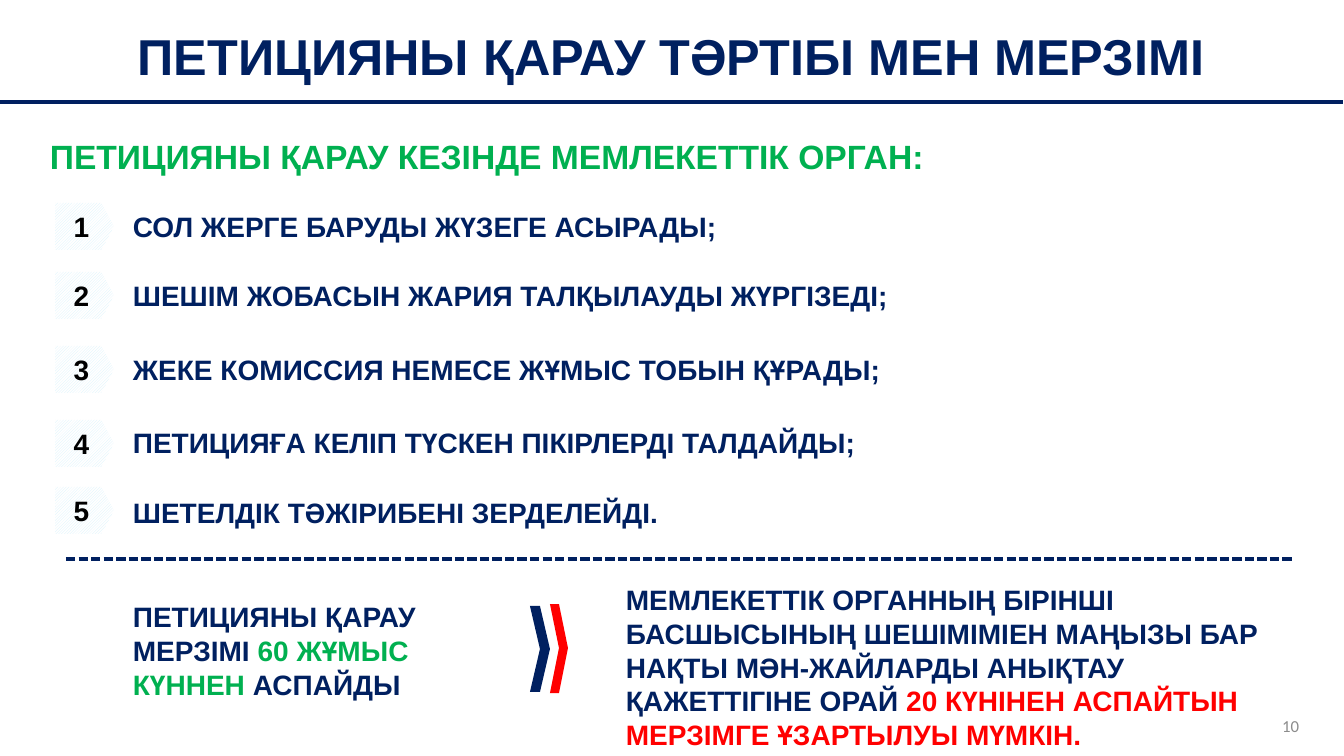
from pptx import Presentation, util as u
from pptx.dml.color import RGBColor
from pptx.enum import dml, shapes, text
from pptx.oxml.ns import qn
from lxml import etree

NAVY = RGBColor(0x00, 0x20, 0x60)
GREEN = RGBColor(0x00, 0xB0, 0x50)
RED = RGBColor(0xFF, 0x00, 0x00)
BLACK = RGBColor(0x00, 0x00, 0x00)
GRAY = RGBColor(0x8C, 0x8C, 0x8C)
ICE = RGBColor(0xD5, 0xF2, 0xFC)
WHITE = RGBColor(0xFF, 0xFF, 0xFF)

SCALE = 914400 / 100.8  # EMU per px
LEFT, CENTER, RIGHT = text.PP_ALIGN.LEFT, text.PP_ALIGN.CENTER, text.PP_ALIGN.RIGHT
TOP, MIDDLE = text.MSO_ANCHOR.TOP, text.MSO_ANCHOR.MIDDLE


def px(*values):
    return [u.Emu(round(v * SCALE)) for v in values]


class Deck:
    font = "Arial"

    def __init__(self, width, height):
        self.prs = Presentation()
        self.prs.slide_width, self.prs.slide_height = px(width, height)
        self.s = self.prs.slides.add_slide(self.prs.slide_layouts[6])

    def add_runs(self, tf, runs, size, align, bold=True, font=None):
        p = tf.paragraphs[0]
        p.alignment = align
        for words, color in runs:
            r = p.add_run()
            r.text = words
            r.font.name = font or self.font
            r.font.size = u.Pt(size)
            r.font.bold = bold
            r.font.color.rgb = color

    def label(self, box, runs, size=20, align=LEFT, anchor=TOP, **style):
        tf = self.s.shapes.add_textbox(*px(*box)).text_frame
        tf.word_wrap = True
        tf.vertical_anchor = anchor
        self.add_runs(tf, runs, size, align, **style)

    def rule(self, x1, x2, y, dash=None):
        c = self.s.shapes.add_connector(shapes.MSO_CONNECTOR.STRAIGHT, *px(x1, y, x2, y))
        c.line.color.rgb = NAVY
        c.line.width = u.Pt(2.25)
        if dash:
            c.line.dash_style = dash
        etree.SubElement(c._element.spPr, qn("a:effectLst"))

    def badge(self, box, number):
        sp = self.s.shapes.add_shape(shapes.MSO_SHAPE.PENTAGON, *px(*box))
        sp.adjustments[0] = 0.27
        sp.shadow.inherit = False
        sp.line.fill.background()
        sp.fill.patterned()
        sp.fill.pattern = dml.MSO_PATTERN.DARK_UPWARD_DIAGONAL
        sp.fill.fore_color.rgb = ICE
        sp.fill.back_color.rgb = WHITE
        tf = sp.text_frame
        tf.vertical_anchor = MIDDLE
        tf.margin_left = tf.margin_right = u.Inches(0.05)
        tf.margin_top = tf.margin_bottom = 0
        self.add_runs(tf, [(str(number), BLACK)], 20, CENTER)

    def chevron(self, group, x, y, w, h, color):
        mid, right, cy = x + w // 2, x + w, y + h // 2
        fb = group.shapes.build_freeform(x, y, scale=SCALE)
        fb.add_line_segments([(mid, y), (right, cy), (mid, y + h), (x, y + h), (mid, cy)])
        sp = fb.convert_to_shape()
        sp.shadow.inherit = False
        sp.fill.solid()
        sp.fill.fore_color.rgb = color
        sp.line.fill.background()


def main():
    d = Deck(1344, 756)

    # Title
    d.label((0, 19, 1343, 72), [("ПЕТИЦИЯНЫ ҚАРАУ ТӘРТІБІ МЕН МЕРЗІМІ", NAVY)],
            36, CENTER, MIDDLE)
    d.rule(0, 1343, 102)

    # Steps of the state body
    d.label((40, 131, 1103, 50),
            [("ПЕТИЦИЯНЫ ҚАРАУ КЕЗІНДЕ МЕМЛЕКЕТТІК ОРГАН:", GREEN)], 24)
    steps = [
        (203, 205, "СОЛ ЖЕРГЕ БАРУДЫ ЖҮЗЕГЕ АСЫРАДЫ;"),
        (272, 274, "ШЕШІМ ЖОБАСЫН ЖАРИЯ ТАЛҚЫЛАУДЫ ЖҮРГІЗЕДІ;"),
        (346, 348, "ЖЕКЕ КОМИССИЯ НЕМЕСЕ ЖҰМЫС ТОБЫН ҚҰРАДЫ;"),
        (420, 421, "ПЕТИЦИЯҒА КЕЛІП ТҮСКЕН ПІКІРЛЕРДІ ТАЛДАЙДЫ;"),
        (487, 491, "ШЕТЕЛДІК ТӘЖІРИБЕНІ ЗЕРДЕЛЕЙДІ."),
    ]
    for number, (badge_y, text_y, words) in enumerate(steps, 1):
        d.badge((55, badge_y, 59, 47), number)
        d.label((123, text_y, 928, 44), [(words, NAVY)])

    # Time limits
    d.rule(66, 1292, 559, dml.MSO_LINE.SQUARE_DOT)
    d.label((123, 595, 359, 112), [("ПЕТИЦИЯНЫ ҚАРАУ МЕРЗІМІ ", NAVY),
                                   ("60 ЖҰМЫС КҮННЕН", GREEN),
                                   (" АСПАЙДЫ", NAVY)])
    arrow = d.s.shapes.add_group_shape()
    d.chevron(arrow, 530, 606, 20, 86, NAVY)
    d.chevron(arrow, 550, 604, 18, 89, RED)
    d.label((616, 578, 712, 179), [
        ("МЕМЛЕКЕТТІК ОРГАННЫҢ БІРІНШІ БАСШЫСЫНЫҢ ШЕШІМІМІЕН МАҢЫЗЫ БАР "
         "НАҚТЫ МӘН-ЖАЙЛАРДЫ АНЫҚТАУ ҚАЖЕТТІГІНЕ ОРАЙ ", NAVY),
        ("20 КҮНІНЕН АСПАЙТЫН МЕРЗІМГЕ ҰЗАРТЫЛУЫ МҮМКІН.", RED)])

    # Page number
    d.label((1007, 706, 302, 40), [("10", GRAY)], 12, RIGHT, MIDDLE,
            bold=False, font="Calibri")

    d.prs.save("out.pptx")


if __name__ == "__main__":
    main()
